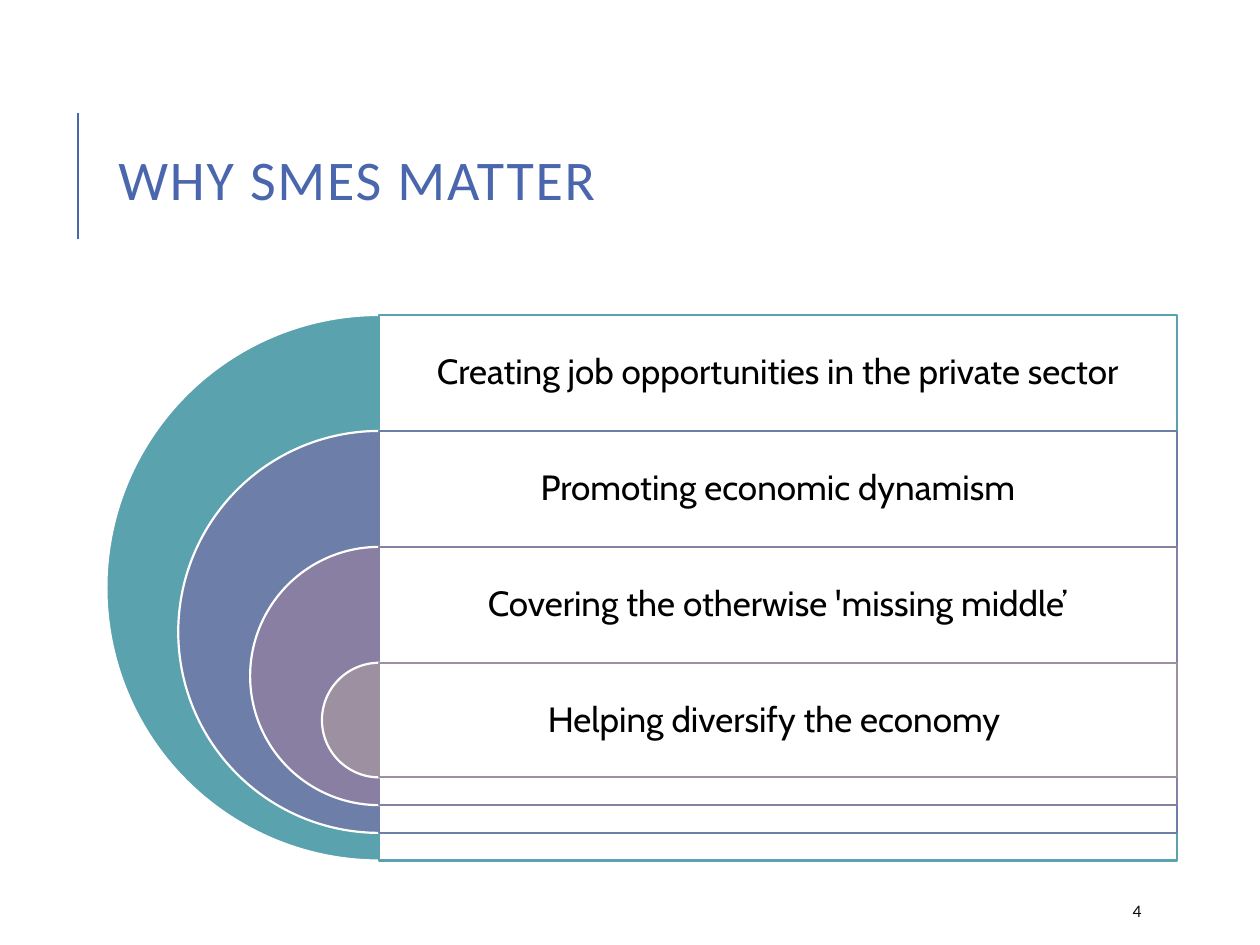
from typing import NamedTuple

from lxml import etree
from pptx import Presentation
from pptx.dml.color import RGBColor
from pptx.enum.shapes import MSO_CONNECTOR, MSO_SHAPE
from pptx.enum.text import MSO_ANCHOR, PP_ALIGN
from pptx.oxml.ns import qn
from pptx.util import Inches, Pt

LEFT, CENTER = PP_ALIGN.LEFT, PP_ALIGN.CENTER
MIDDLE = MSO_ANCHOR.MIDDLE
PIE, RECTANGLE = MSO_SHAPE.PIE, MSO_SHAPE.RECTANGLE
STRAIGHT = MSO_CONNECTOR.STRAIGHT

WHITE = RGBColor(0xFF, 0xFF, 0xFF)
BLACK = RGBColor(0x00, 0x00, 0x00)
NEAR_BLACK = RGBColor(0x0D, 0x0D, 0x0D)
BLUE = RGBColor(0x4A, 0x66, 0xAC)
TEAL = RGBColor(0x5A, 0xA2, 0xAE)
SLATE = RGBColor(0x6D, 0x7F, 0xA8)
PURPLE = RGBColor(0x88, 0x7F, 0xA3)
MAUVE = RGBColor(0x9D, 0x90, 0xA0)

# Diagram grid, in inches: each ring starts one row lower and ends one step higher.
AXIS = 3.01
TOP = 2.5
ROW = 0.92
STEP = 0.22
OUTER_DIAMETER = 4.33
PANEL_WIDTH = 6.33
QUARTER_TURN, THREE_QUARTER_TURN = 54, 162  # adjustment units, 0.6 per degree


class Box(NamedTuple):
    left: float
    top: float
    width: float
    height: float

    def lengths(self) -> list:
        return [Inches(value) for value in self]


class Ring(NamedTuple):
    text: str
    color: RGBColor


RINGS = [
    Ring("Creating job opportunities in the private sector", TEAL),
    Ring("Promoting economic dynamism", SLATE),
    Ring("Covering the otherwise 'missing middle’", PURPLE),
    Ring("Helping diversify the economy ", MAUVE),
]


def write_text(frame, text: str, *, font: str, size: float, color: RGBColor,
               align=LEFT, line_spacing: float = 1.0, inset=None,
               letter_spacing: float = 0) -> None:
    frame.word_wrap = True
    frame.vertical_anchor = MIDDLE
    if inset is not None:
        frame.margin_left = frame.margin_right = Inches(inset)
        frame.margin_top = frame.margin_bottom = Inches(inset)
    para = frame.paragraphs[0]
    para.alignment = align
    para.line_spacing = line_spacing
    span = para.add_run()
    span.text = text
    span.font.name = font
    span.font.size = Pt(size)
    span.font.color.rgb = color
    if letter_spacing:
        span.font._element.set("spc", str(round(letter_spacing * 100)))


def add_filled_shape(slide, preset, box: Box, fill: RGBColor, line: RGBColor):
    shape = slide.shapes.add_shape(preset, *box.lengths())
    shape.shadow.inherit = False
    shape.fill.solid()
    shape.fill.fore_color.rgb = fill
    shape.line.color.rgb = line
    shape.line.width = Pt(1.25)
    return shape


def set_opacity(shape, percent: int) -> None:
    color = shape._element.spPr.find(qn("a:solidFill")).find(qn("a:srgbClr"))
    etree.SubElement(color, qn("a:alpha")).set("val", str(percent * 1000))


def add_ring(slide, ring: Ring, index: int) -> None:
    """Draw a half disc, the panel beside it and the label in the panel's first row."""
    top = TOP + index * ROW
    diameter = OUTER_DIAMETER - index * (ROW + STEP)
    disc_box = Box(AXIS - diameter / 2, top, diameter, diameter)
    disc = add_filled_shape(slide, PIE, disc_box, ring.color, WHITE)
    disc.adjustments[0] = QUARTER_TURN
    disc.adjustments[1] = THREE_QUARTER_TURN

    panel_box = Box(AXIS, top, PANEL_WIDTH, diameter)
    panel = add_filled_shape(slide, RECTANGLE, panel_box, WHITE, ring.color)
    set_opacity(panel, 90)

    label = slide.shapes.add_textbox(*panel_box._replace(height=ROW).lengths())
    write_text(label.text_frame, ring.text, font="Cabin", size=20, color=BLACK,
               align=CENTER, line_spacing=0.9, inset=0.08)


def add_title(slide, text: str) -> None:
    rule = slide.shapes.add_connector(
        STRAIGHT, Inches(0.62), Inches(1.9), Inches(0.62), Inches(0.9))
    rule.line.color.rgb = BLUE
    rule.line.width = Pt(1.5)
    etree.SubElement(rule._element.spPr, qn("a:effectLst"))

    title = slide.shapes.title
    title.left, title.top, title.width, title.height = Box(
        0.84, 0.64, 7.97, 1.64).lengths()
    write_text(title.text_frame, text, font="Calibri", size=32, color=BLUE,
               line_spacing=0.8, letter_spacing=1)


def add_page_number(slide, number: int) -> None:
    box = slide.shapes.add_textbox(*Box(8.89, 7.08, 0.8, 0.3).lengths())
    write_text(box.text_frame, str(number), font="Calibri", size=10, color=NEAR_BLACK)


def main() -> None:
    deck = Presentation()
    deck.slide_width, deck.slide_height = Inches(10), Inches(7.5)
    title_only = deck.slide_layouts.get_by_name("Title Only")
    slide = deck.slides.add_slide(title_only)
    add_title(slide, "WHY SMES MATTER")
    for index, ring in enumerate(RINGS):
        add_ring(slide, ring, index)
    add_page_number(slide, 4)
    deck.save("out.pptx")


if __name__ == "__main__":
    main()
